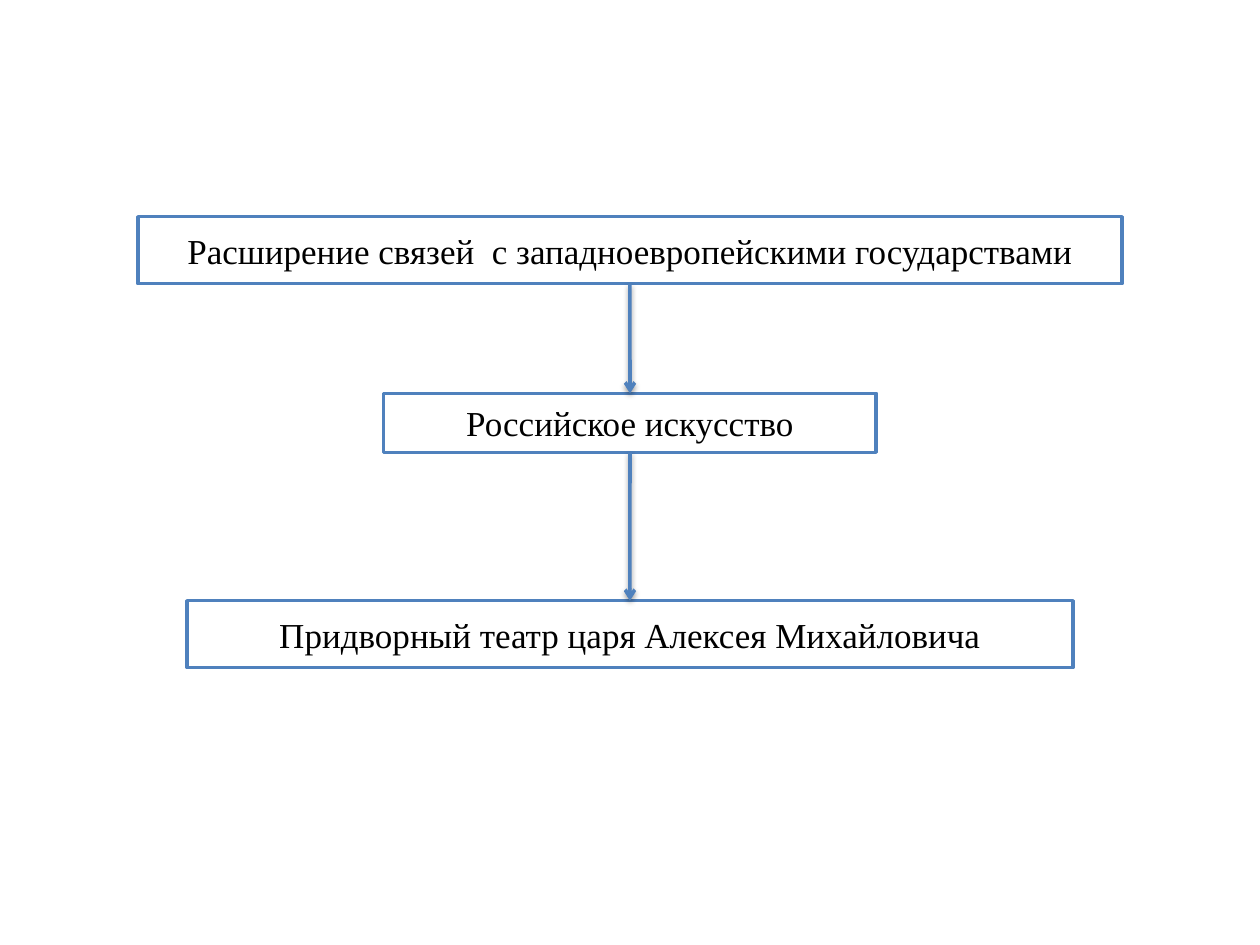
"""Build a slide with a three-step vertical flow chart."""
from itertools import pairwise

from lxml.etree import SubElement
from pptx import Presentation
from pptx.dml.color import RGBColor
from pptx.enum.shapes import MSO_CONNECTOR, MSO_SHAPE
from pptx.enum.text import MSO_ANCHOR, PP_ALIGN
from pptx.oxml.ns import qn
from pptx.util import Cm, Pt

BLUE = RGBColor(0x4F, 0x81, 0xBD)
WHITE = RGBColor(0xFF, 0xFF, 0xFF)
BLACK = RGBColor(0x00, 0x00, 0x00)

SLIDE_WIDTH = 25.4
STEPS = [
    ("Расширение связей  с западноевропейскими государствами", 4.37, 19.84, 1.35),
    ("Российское искусство", 7.93, 9.93, 1.19),
    ("Придворный театр царя Алексея Михайловича", 12.11, 17.86, 1.35),
]

prs = Presentation()
prs.slide_width, prs.slide_height = Cm(SLIDE_WIDTH), Cm(19.05)
s = prs.slides.add_slide(prs.slide_layouts[6])

boxes = []
for text, top, width, height in STEPS:
    left = (SLIDE_WIDTH - width) / 2
    sp = s.shapes.add_shape(MSO_SHAPE.RECTANGLE, Cm(left), Cm(top), Cm(width), Cm(height))
    sp.shadow.inherit = False
    sp.fill.solid()
    sp.fill.fore_color.rgb = WHITE
    sp.line.color.rgb = BLUE
    sp.line.width = Pt(2)
    tf = sp.text_frame
    tf.word_wrap = True
    tf.vertical_anchor = MSO_ANCHOR.MIDDLE
    tf.text = text
    p = tf.paragraphs[0]
    p.alignment = PP_ALIGN.CENTER
    r = p.runs[0]
    r.font.name = "Times New Roman"
    r.font.size = Pt(20)
    r.font.color.rgb = BLACK
    boxes.append(sp)

for upper, lower in pairwise(boxes):
    arrow = s.shapes.add_connector(MSO_CONNECTOR.STRAIGHT, 0, 0, 0, 0)
    arrow.begin_connect(upper, 2)
    arrow.end_connect(lower, 0)
    arrow.line.color.rgb = BLUE
    arrow.line.width = Pt(2)
    SubElement(arrow.line._get_or_add_ln(), qn("a:tailEnd"), type="arrow")

prs.save("out.pptx")
